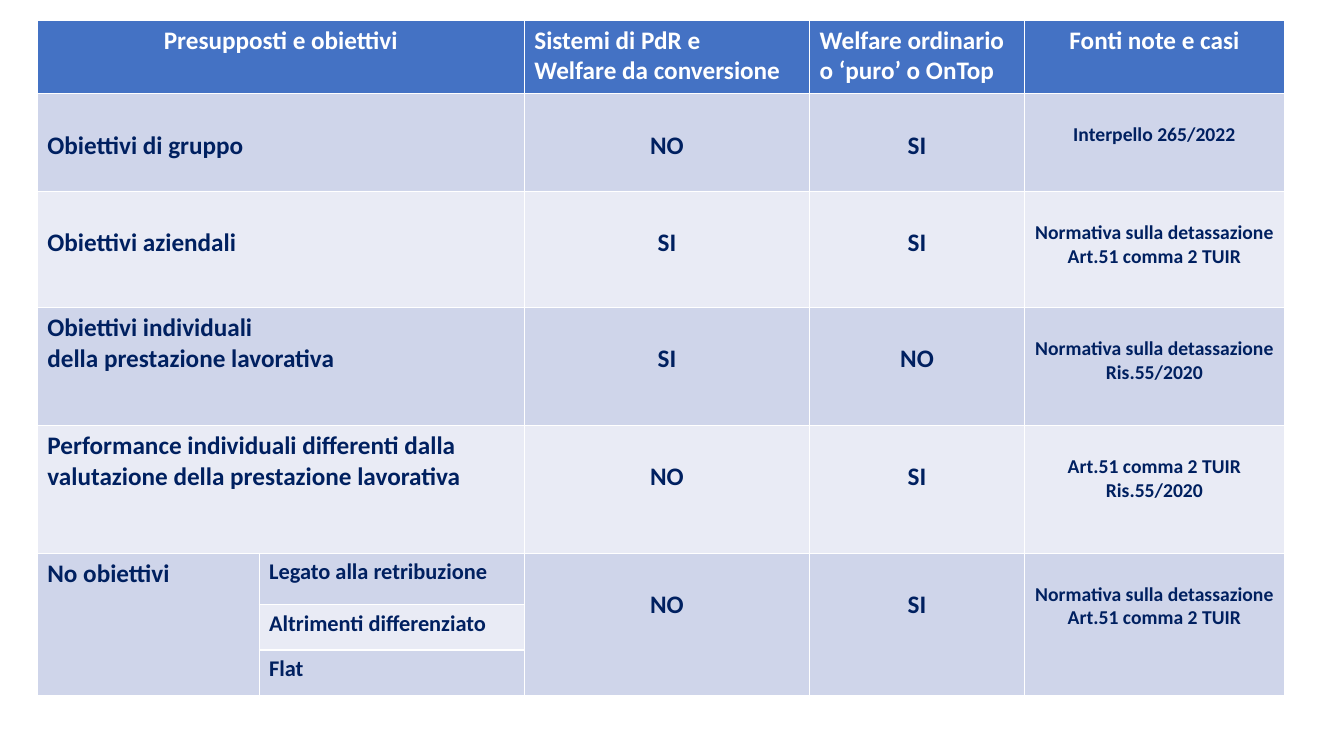
"""Build a slide with a table that matches bonus goals to welfare schemes."""
import dataclasses

import pptx
import pptx.dml.color
import pptx.enum.text
import pptx.util


@dataclasses.dataclass(frozen=True)
class Theme:
    font: str = "Calibri"
    header: str = "4472C4"
    header_text: str = "FFFFFF"
    dark_band: str = "CFD5EA"
    light_band: str = "E9EBF5"
    text: str = "002060"
    body_size: int = 18
    option_size: int = 16
    source_size: int = 14


theme = Theme()
Inches = pptx.util.Inches
RGBColor = pptx.dml.color.RGBColor
LEFT = pptx.enum.text.PP_ALIGN.LEFT
CENTER = pptx.enum.text.PP_ALIGN.CENTER


def write_cell(cell, text, fill, color=theme.text, size=theme.body_size, align=LEFT, top=0.05):
    cell.fill.solid()
    cell.fill.fore_color.rgb = RGBColor.from_string(fill)
    cell.margin_top = Inches(top)
    cell.text_frame.text = text
    for para in cell.text_frame.paragraphs:
        para.alignment = align
        for span in para.runs:
            span.font.name = theme.font
            span.font.size = pptx.util.Pt(size)
            span.font.bold = True
            span.font.color.rgb = RGBColor.from_string(color)


column_widths = [2.2, 2.63, 2.83, 2.13, 2.58]
row_heights = [0.73, 0.97, 1.15, 1.17, 1.27, 0.51, 0.45, 0.45]
body_drop = 0.36
source_drop = 0.29

headers = [
    (0, "Presupposti e obiettivi", CENTER),
    (2, "Sistemi di PdR e\nWelfare da conversione", LEFT),
    (3, "Welfare ordinario o ‘puro’ o OnTop", LEFT),
    (4, "Fonti note e casi", CENTER),
]
tax_rule = "Normativa sulla detassazione"
tuir = "Art.51 comma 2 TUIR"
ruling = "Ris.55/2020"
goals = [
    ("Obiettivi di gruppo", body_drop, "NO", "SI", "Interpello 265/2022"),
    ("Obiettivi aziendali", body_drop, "SI", "SI", f"{tax_rule}\n{tuir}"),
    ("Obiettivi individuali\ndella prestazione lavorativa", 0.05, "SI", "NO", f"{tax_rule}\n{ruling}"),
    (
        "Performance individuali differenti dalla valutazione della prestazione lavorativa",
        0.05, "NO", "SI", f"{tuir}\n{ruling}",
    ),
    ("No obiettivi", 0.05, "NO", "SI", f"{tax_rule}\n{tuir}"),
]
options = ["Legato alla retribuzione", "Altrimenti differenziato", "Flat"]
bands = [theme.dark_band, theme.light_band]
options_row = len(goals)

deck = pptx.Presentation()
deck.slide_width = Inches(13.33)
deck.slide_height = Inches(7.5)
page = deck.slides.add_slide(deck.slide_layouts[6])

frame = page.shapes.add_table(
    len(row_heights), len(column_widths), Inches(0.37), Inches(0.2),
    Inches(sum(column_widths)), Inches(sum(row_heights)),
)
table = frame.table
for column, width in zip(table.columns, column_widths):
    column.width = Inches(width)
for row, height in zip(table.rows, row_heights):
    row.height = Inches(height)

for row in range(options_row):
    table.cell(row, 0).merge(table.cell(row, 1))
for column in (0, 2, 3, 4):
    table.cell(options_row, column).merge(table.cell(len(row_heights) - 1, column))

for column, title, align in headers:
    write_cell(table.cell(0, column), title, theme.header, color=theme.header_text, align=align)

for row, (goal, goal_top, bonus, welfare, source) in enumerate(goals, start=1):
    band = bands[(row - 1) % 2]
    write_cell(table.cell(row, 0), goal, band, top=goal_top)
    for column, answer in ((2, bonus), (3, welfare)):
        write_cell(table.cell(row, column), answer, band, align=CENTER, top=body_drop)
    write_cell(
        table.cell(row, 4), source, band, size=theme.source_size, align=CENTER, top=source_drop
    )

for index, option in enumerate(options):
    write_cell(table.cell(options_row + index, 1), option, bands[index % 2], size=theme.option_size)

deck.save("out.pptx")
